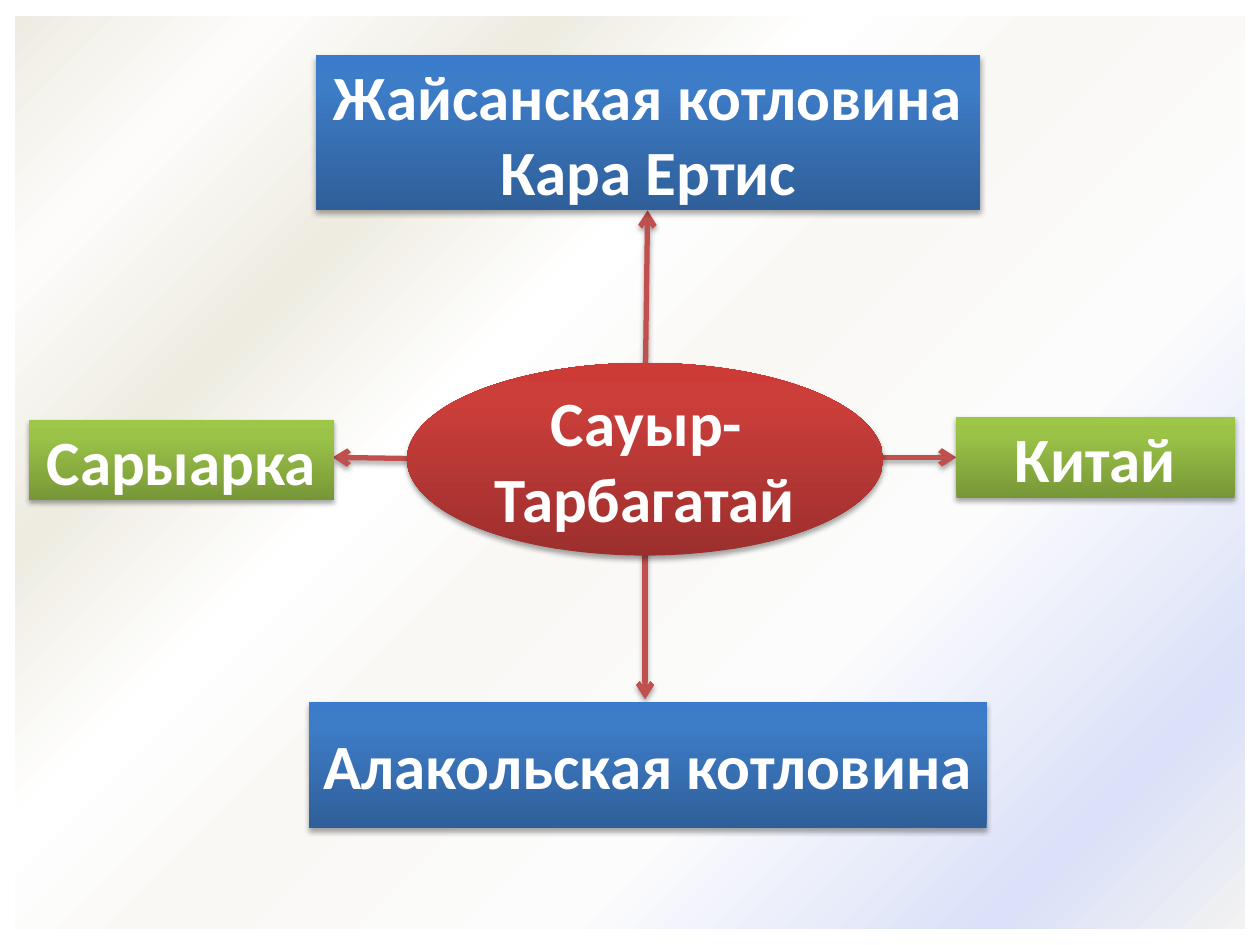
from lxml import etree
from pptx import Presentation
from pptx.dml.color import RGBColor
from pptx.enum.shapes import MSO_CONNECTOR, MSO_SHAPE
from pptx.enum.text import MSO_ANCHOR, PP_ALIGN
from pptx.oxml import parse_xml
from pptx.util import Inches, Pt

RECT, OVAL = MSO_SHAPE.RECTANGLE, MSO_SHAPE.OVAL
STRAIGHT = MSO_CONNECTOR.STRAIGHT
MIDDLE, CENTER = MSO_ANCHOR.MIDDLE, PP_ALIGN.CENTER
NS = "http://schemas.openxmlformats.org/drawingml/2006/main"

# Gradient stops: (position in percent, colour)
BACKDROP = [(0, "EEECE1"), (12, "FDFCFB"), (25, "EEECE1"), (38, "FFFFFF"),
            (49, "F9F8F5"), (68, "FCFCFD"), (88, "DAE1F8"), (100, "F2F2F2")]
RED = [(0, "9C2F2D"), (80, "CB3E3A"), (100, "CE3B37")]
BLUE = [(0, "2F5F99"), (80, "3D7CC7"), (100, "3A7CCB")]
GREEN = [(0, "779737"), (80, "9BC348"), (100, "9DC746")]


def add_gradient_shape(kind, bounds, stops, angle):
    shape = page.shapes.add_shape(kind, *[Inches(n) for n in bounds])
    shape.line.fill.background()
    shape.shadow.inherit = False
    marks = "".join(f'<a:gs pos="{pos * 1000}"><a:srgbClr val="{color}"/></a:gs>'
                    for pos, color in stops)
    gradient = parse_xml(f'<a:gradFill xmlns:a="{NS}" rotWithShape="1"><a:gsLst>{marks}'
                         f'</a:gsLst><a:lin ang="{angle * 60000}" scaled="0"/></a:gradFill>')
    shape.line._get_or_add_ln().addprevious(gradient)
    return shape


def add_shadow(properties):
    for old in properties.findall(f"{{{NS}}}effectLst"):
        properties.remove(old)
    properties.append(parse_xml(
        f'<a:effectLst xmlns:a="{NS}"><a:outerShdw blurRad="{Pt(3.1)}" dist="{Pt(1.8)}" '
        'dir="5400000" rotWithShape="0"><a:srgbClr val="000000"><a:alpha val="35000"/>'
        '</a:srgbClr></a:outerShdw></a:effectLst>'))


deck = Presentation()
deck.slide_width, deck.slide_height = Inches(10), Inches(7.5)
page = deck.slides.add_slide(deck.slide_layouts[6])

# Backdrop
add_gradient_shape(RECT, (0.12, 0.13, 9.76, 7.24), BACKDROP, 45)

# Arrows from the centre to each neighbour
arrows = [
    (5.12, 3.17, 5.14, 1.67),
    (3.32, 3.64, 2.64, 3.63),
    (6.62, 3.63, 7.59, 3.63),
    (5.12, 4.06, 5.12, 5.55),
]
for ends in arrows:
    arrow = page.shapes.add_connector(STRAIGHT, *[Inches(n) for n in ends])
    arrow.line.color.rgb = RGBColor.from_string("C0504D")
    arrow.line.width = Pt(3)
    etree.SubElement(arrow.line._get_or_add_ln(), f"{{{NS}}}tailEnd", type="arrow")
    add_shadow(arrow._element.spPr)

# Range in the centre and its neighbours
regions = [
    (OVAL, (3.23, 2.88, 3.78, 1.53), RED, ["Сауыр-Тарбагатай"]),
    (RECT, (2.51, 0.44, 5.27, 1.23), BLUE, ["Жайсанская котловина", "Кара Ертис"]),
    (RECT, (2.45, 5.57, 5.38, 1), BLUE, ["Алакольская котловина"]),
    (RECT, (0.23, 3.33, 2.42, 0.64), GREEN, ["Сарыарка"]),
    (RECT, (7.59, 3.31, 2.21, 0.64), GREEN, ["Китай"]),
]
for kind, bounds, stops, lines in regions:
    box = add_gradient_shape(kind, bounds, stops, 270)
    add_shadow(box._element.spPr)
    frame = box.text_frame
    frame.word_wrap = True
    frame.vertical_anchor = MIDDLE
    frame.text = "\n".join(lines)
    for para in frame.paragraphs:
        para.alignment = CENTER
        para.font.name = "Calibri"
        para.font.size = Pt(36)
        para.font.bold = True
        para.font.color.rgb = RGBColor.from_string("FFFFFF")

deck.save("out.pptx")
